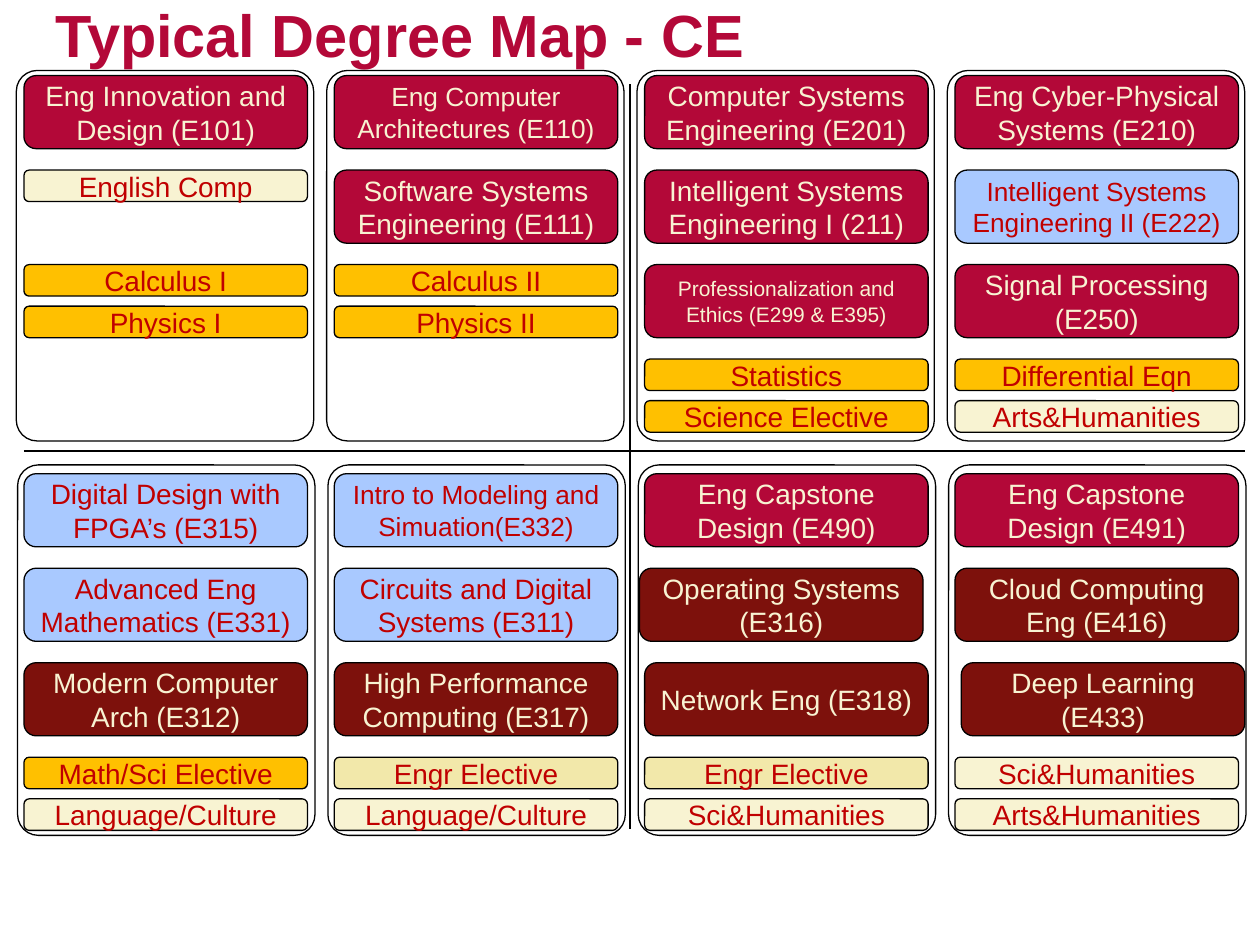
"""Build a one-slide map of the eight semesters of a Computer Engineering degree."""
from lxml.etree import SubElement
from pptx import Presentation
from pptx.dml.color import RGBColor
from pptx.enum.shapes import MSO_CONNECTOR, MSO_SHAPE
from pptx.enum.text import MSO_ANCHOR, PP_ALIGN
from pptx.oxml.ns import qn
from pptx.util import Inches, Pt

TITLE = "Typical Degree Map - CE"
COLORS = {"crimson": "B30838", "maroon": "7D110C", "blue": "A9C9FF", "gold": "FFC000",
          "cream": "F8F3D2", "sand": "F2E8AA", "red": "C00000", "black": "000000"}
KINDS = {
    "core": ("crimson", "cream"),
    "advanced": ("maroon", "cream"),
    "track": ("blue", "red"),
    "science": ("gold", "red"),
    "general": ("cream", "red"),
    "elective": ("sand", "red"),
}
TALL, SHORT = 0.58, 0.25
HEIGHTS = {"core": TALL, "advanced": TALL, "track": TALL}
SECOND = 0.44

# SEMESTERS
YEARS = [
    [
        [(0, "core", "Eng Innovation and Design (E101)"),
         (1, "general", "English Comp"),
         (2, "science", "Calculus I"),
         (2 + SECOND, "science", "Physics I")],
        [(0, "core", "Eng Computer Architectures (E110)"),
         (1, "core", "Software Systems Engineering (E111)"),
         (2, "science", "Calculus II"),
         (2 + SECOND, "science", "Physics II")],
        [(0, "core", "Computer Systems Engineering (E201)"),
         (1, "core", "Intelligent Systems Engineering I (211)"),
         (2, "core", "Professionalization and Ethics (E299 & E395)"),
         (3, "science", "Statistics"),
         (3 + SECOND, "science", "Science Elective")],
        [(0, "core", "Eng Cyber-Physical Systems (E210)"),
         (1, "track", "Intelligent Systems Engineering II (E222)"),
         (2, "core", "Signal Processing (E250)"),
         (3, "science", "Differential Eqn"),
         (3 + SECOND, "general", "Arts&Humanities")],
    ],
    [
        [(0, "track", "Digital Design with FPGA’s (E315)"),
         (1, "track", "Advanced Eng Mathematics (E331)"),
         (2, "advanced", "Modern Computer Arch (E312)"),
         (3, "science", "Math/Sci Elective"),
         (3 + SECOND, "general", "Language/Culture")],
        [(0, "track", "Intro to Modeling and Simuation(E332)"),
         (1, "track", "Circuits and Digital Systems (E311)"),
         (2, "advanced", "High Performance Computing (E317)"),
         (3, "elective", "Engr Elective"),
         (3 + SECOND, "general", "Language/Culture")],
        [(0, "core", "Eng Capstone Design (E490)"),
         (1, "advanced", "Operating Systems (E316)"),
         (2, "advanced", "Network Eng (E318)"),
         (3, "elective", "Engr Elective"),
         (3 + SECOND, "general", "Sci&Humanities")],
        [(0, "core", "Eng Capstone Design (E491)"),
         (1, "advanced", "Cloud Computing Eng (E416)"),
         (2, "advanced", "Deep Learning (E433)"),
         (3, "general", "Sci&Humanities"),
         (3 + SECOND, "general", "Arts&Humanities")],
    ],
]
SIZES = {
    "Eng Computer Architectures (E110)": 15,
    "Intelligent Systems Engineering II (E222)": 15,
    "Professionalization and Ethics (E299 & E395)": 12,
    "Intro to Modeling and Simuation(E332)": 15,
}
SHIFTS = {"Operating Systems (E316)": -0.04, "Deep Learning (E433)": 0.05}

LEFT, COLUMN, ROW, CARD_WIDTH = 0.19, 2.463, 0.75, 2.25
CARD_TOPS = (0.6, 3.76)
FRAME_CORNERS = ((0.13, 0.56), (0.14, 3.69))
FRAME_WIDTH, FRAME_HEIGHT = 2.36, 2.94
DIVIDERS = [(5, 0.67, 5, 6.58), (LEFT, 3.58, 9.88, 3.58)]


def color(name):
    return RGBColor.from_string(COLORS[name])


def add_box(slide, left, top, width, height):
    shape = slide.shapes.add_shape(MSO_SHAPE.ROUNDED_RECTANGLE, Inches(left), Inches(top),
                                   Inches(width), Inches(height))
    shape.shadow.inherit = False
    shape.line.color.rgb = color("black")
    shape.line.width = Pt(0.75)
    return shape


def write(shape, text, size, color_name, align, bold=False):
    frame = shape.text_frame
    frame.word_wrap = True
    frame.vertical_anchor = MSO_ANCHOR.MIDDLE
    paragraph = frame.paragraphs[0]
    paragraph.text = text
    paragraph.alignment = align
    font = paragraph.font
    font.name, font.size, font.bold = "Arial", Pt(size), bold
    font.color.rgb = color(color_name)


def add_card(slide, column, top, kind, text):
    fill, text_color = KINDS[kind]
    left = LEFT + column * COLUMN + SHIFTS.get(text, 0)
    card = add_box(slide, left, top, CARD_WIDTH, HEIGHTS.get(kind, SHORT))
    card.fill.solid()
    card.fill.fore_color.rgb = color(fill)
    write(card, text, SIZES.get(text, 16), text_color, PP_ALIGN.CENTER)


def add_frame(slide, left, top):
    frame = add_box(slide, left, top, FRAME_WIDTH, FRAME_HEIGHT)
    frame.adjustments[0] = 0.07
    frame.fill.background()


def add_divider(slide, ends):
    line = slide.shapes.add_connector(MSO_CONNECTOR.STRAIGHT, *map(Inches, ends))
    line.line.color.rgb = color("black")
    line.line.width = Pt(1.25)
    SubElement(line._element.spPr, qn("a:effectLst"))


def main():
    presentation = Presentation()
    presentation.slide_width, presentation.slide_height = Inches(10), Inches(7.5)
    slide = presentation.slides.add_slide(presentation.slide_layouts[6])
    title = slide.shapes.add_textbox(Inches(0.34), Inches(0.01), Inches(9.17), Inches(0.51))
    write(title, TITLE, 34, "crimson", PP_ALIGN.LEFT, bold=True)

    for semesters, card_top, (frame_left, frame_top) in zip(YEARS, CARD_TOPS, FRAME_CORNERS):
        for column, courses in enumerate(semesters):
            for row, kind, text in courses:
                add_card(slide, column, card_top + row * ROW, kind, text)
            add_frame(slide, frame_left + column * COLUMN, frame_top)
    for ends in DIVIDERS:
        add_divider(slide, ends)
    presentation.save("out.pptx")


if __name__ == "__main__":
    main()
